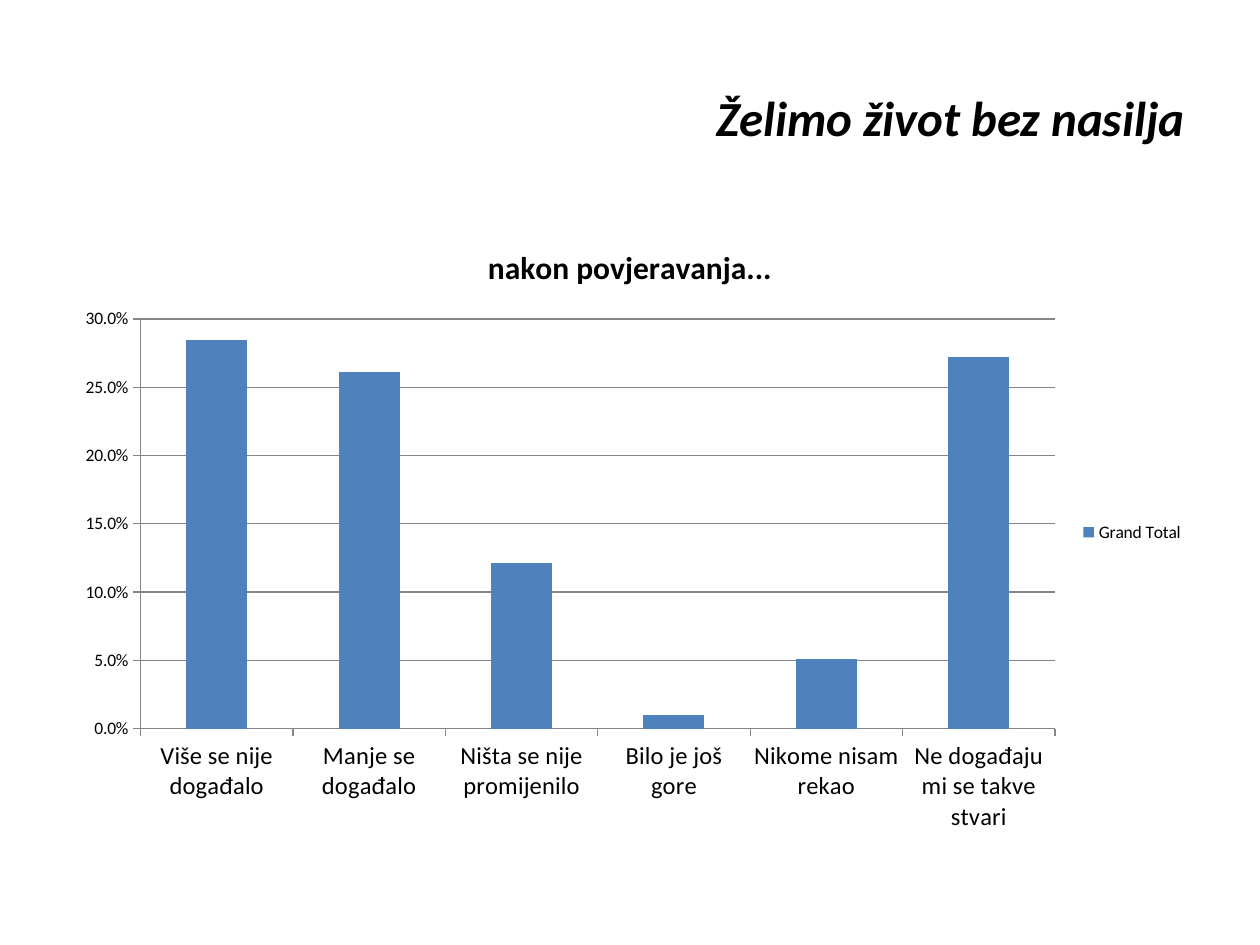
from pptx import Presentation
from pptx.chart.data import CategoryChartData
from pptx.dml.color import RGBColor
from pptx.enum.chart import XL_CHART_TYPE, XL_LEGEND_POSITION, XL_TICK_MARK
from pptx.enum.text import MSO_ANCHOR, PP_ALIGN
from pptx.util import Inches, Pt

COLUMNS = XL_CHART_TYPE.COLUMN_CLUSTERED
LEGEND_RIGHT = XL_LEGEND_POSITION.RIGHT
TICK_OUTSIDE = XL_TICK_MARK.OUTSIDE
TICK_NONE = XL_TICK_MARK.NONE
RIGHT = PP_ALIGN.RIGHT
MIDDLE = MSO_ANCHOR.MIDDLE

COLORS = {"text": "000000", "bar": "4F81BD", "line": "868686"}
TITLE_ONLY = 5

ANSWERS = {
    "Više se nije događalo": 0.285,
    "Manje se događalo": 0.261,
    "Ništa se nije promijenilo": 0.121,
    "Bilo je još gore": 0.01,
    "Nikome nisam rekao": 0.051,
    "Ne događaju mi se takve stvari": 0.272,
}


class SlideBuilder:
    font_name = "Calibri"

    def __init__(self, slide):
        self.slide = slide

    def color(self, name):
        return RGBColor.from_string(COLORS[name])

    def style_font(self, font, size, bold=False, italic=False):
        font.name = self.font_name
        font.size = Pt(size)
        font.bold = bold
        font.italic = italic
        font.color.rgb = self.color("text")

    def style_line(self, line):
        line.color.rgb = self.color("line")
        line.width = Pt(0.75)

    def title(self, text, left, top, width, height):
        title = self.slide.shapes.title
        title.left, title.top = Inches(left), Inches(top)
        title.width, title.height = Inches(width), Inches(height)
        frame = title.text_frame
        frame.text = text
        frame.word_wrap = True
        frame.vertical_anchor = MIDDLE
        heading = frame.paragraphs[0]
        heading.alignment = RIGHT
        self.style_font(heading.runs[0].font, 28, bold=True, italic=True)

    def column_chart(self, heading, series_name, values, left, top, width, height):
        data = CategoryChartData(number_format="0.0%")
        data.categories = list(values)
        data.add_series(series_name, list(values.values()))
        chart = self.slide.shapes.add_chart(
            COLUMNS, Inches(left), Inches(top), Inches(width), Inches(height), data
        ).chart
        self.style_font(chart.font, 10)

        chart.has_title = True
        chart_heading = chart.chart_title.text_frame
        chart_heading.text = heading
        self.style_font(chart_heading.paragraphs[0].runs[0].font, 18, bold=True)

        chart.has_legend = True
        chart.legend.position = LEGEND_RIGHT
        chart.legend.include_in_layout = False
        self.style_font(chart.legend.font, 10)

        plot = chart.plots[0]
        plot.gap_width = 150
        plot.vary_by_categories = False
        bars = plot.series[0].format.fill
        bars.solid()
        bars.fore_color.rgb = self.color("bar")

        for axis, size in ((chart.category_axis, 14), (chart.value_axis, 10)):
            axis.major_tick_mark = TICK_OUTSIDE
            axis.minor_tick_mark = TICK_NONE
            self.style_font(axis.tick_labels.font, size)
            self.style_line(axis.format.line)

        percent_axis = chart.value_axis
        percent_axis.minimum_scale = 0
        percent_axis.maximum_scale = 0.3
        percent_axis.major_unit = 0.05
        percent_axis.has_major_gridlines = True
        self.style_line(percent_axis.major_gridlines.format.line)
        percent_axis.tick_labels.number_format = "0.0%"
        percent_axis.tick_labels.number_format_is_linked = False


def main():
    presentation = Presentation()
    presentation.slide_width = Inches(10)
    presentation.slide_height = Inches(7.5)
    slide = presentation.slides.add_slide(presentation.slide_layouts[TITLE_ONLY])
    builder = SlideBuilder(slide)
    builder.title("Želimo život bez nasilja", 0.5, 0.3, 9, 1.25)
    builder.column_chart(
        "nakon povjeravanja...", "Grand Total", ANSWERS, 0.5, 1.75, 9, 4.95
    )
    presentation.save("out.pptx")


if __name__ == "__main__":
    main()
